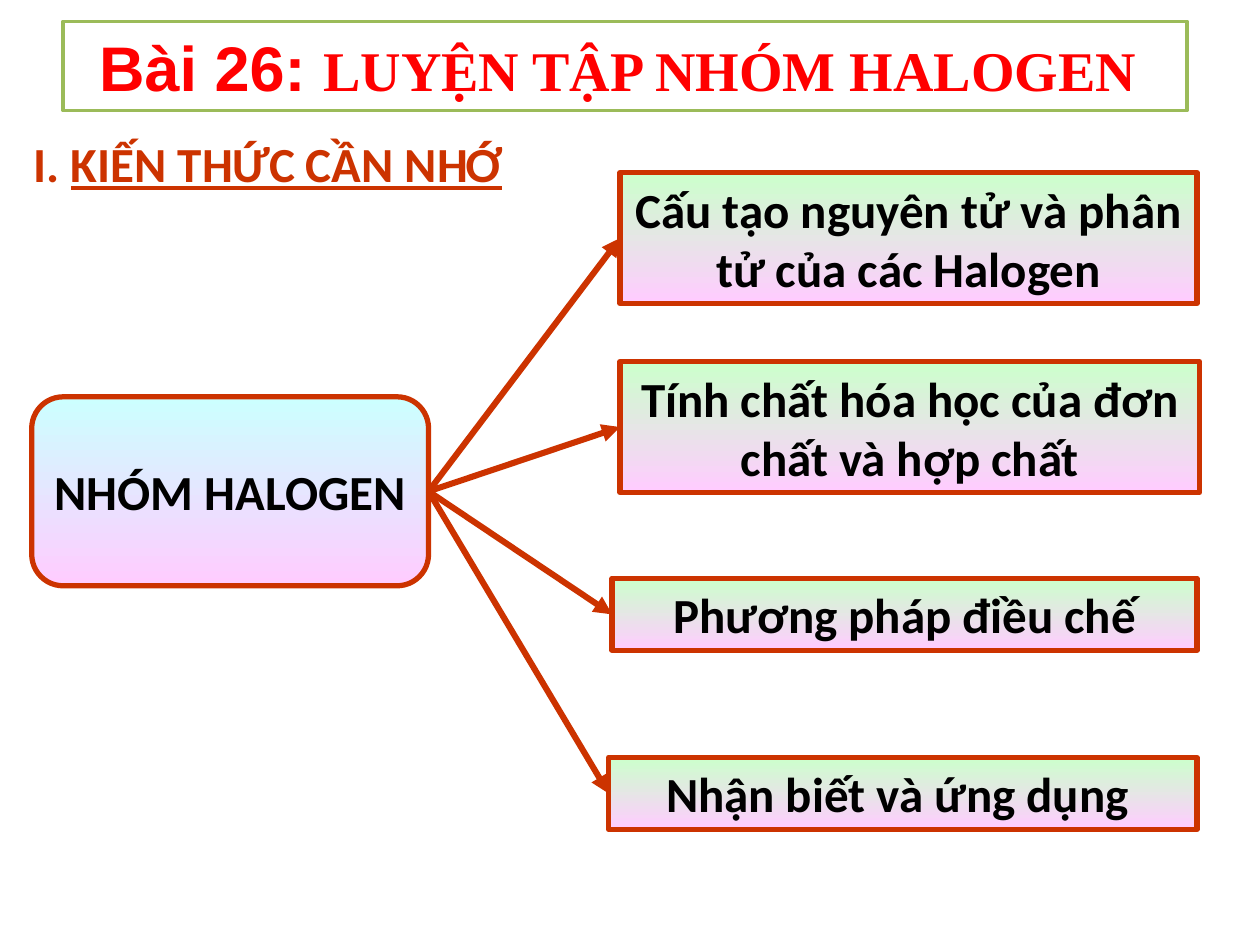
"""Build the overview slide for the halogen group review lesson."""
from lxml import etree
from pptx import Presentation
from pptx.dml.color import RGBColor
from pptx.enum.shapes import MSO_CONNECTOR, MSO_SHAPE
from pptx.enum.text import MSO_ANCHOR, PP_ALIGN
from pptx.oxml.ns import qn
from pptx.util import Cm, Pt

RECT = MSO_SHAPE.RECTANGLE
ROUNDED = MSO_SHAPE.FLOWCHART_ALTERNATE_PROCESS
STRAIGHT = MSO_CONNECTOR.STRAIGHT
MIDDLE = MSO_ANCHOR.MIDDLE
LEFT, CENTER = PP_ALIGN.LEFT, PP_ALIGN.CENTER
RIGHT_SIDE, LEFT_SIDE = 3, 1

COLORS = {
    "rust": "CC3300", "red": "FF0000", "black": "000000", "white": "FFFFFF",
    "olive": "9BBB59", "cyan": "CCFFFF", "green": "CCFFCC", "pink": "FFCCFF",
}
C = {name: RGBColor.from_string(value) for name, value in COLORS.items()}
BODY = {"name": "Calibri", "size": Pt(28), "bold": True}


def write(sp, runs, color, align, wrap=True):
    tf = sp.text_frame
    tf.word_wrap = wrap
    tf.vertical_anchor = MIDDLE
    p = tf.paragraphs[0]
    p.alignment = align
    for text, fmt in runs:
        r = p.add_run()
        r.text = text
        for key, value in {**BODY, **fmt}.items():
            setattr(r.font, key, value)
        r.font.color.rgb = C[color]


def add_box(shape_type, box, top_color, text, wrap=True):
    sp = s.shapes.add_shape(shape_type, *map(Cm, box))
    sp.shadow.inherit = False
    sp.fill.gradient()
    sp.fill.gradient_angle = 270
    for stop, color in zip(sp.fill.gradient_stops, (top_color, "pink")):
        stop.color.rgb = C[color]
    sp.line.color.rgb = C["rust"]
    sp.line.width = Pt(3)
    write(sp, [(text, {})], "black", CENTER, wrap)
    return sp


prs = Presentation()
prs.slide_width, prs.slide_height = Cm(25.4), Cm(19.05)
s = prs.slides.add_slide(prs.slide_layouts[5])

title = s.shapes.title
title.left, title.top, title.width, title.height = map(Cm, (1.27, 0.43, 22.66, 1.8))
title.fill.solid()
title.fill.fore_color.rgb = C["white"]
title.line.color.rgb = C["olive"]
title.line.width = Pt(2)
write(title, [
    ("Bài 26: ", {"name": "Arial", "size": Pt(36)}),
    ("LUYỆN TẬP NHÓM HALOGEN ", {"name": "Times New Roman", "size": Pt(32)}),
], "red", CENTER)

heading = s.shapes.add_textbox(*map(Cm, (0.43, 2.57, 13.34, 1.45)))
write(heading, [("I. ", {}), ("KIẾN THỨC CẦN NHỚ", {"underline": True})], "rust", LEFT)

group = add_box(ROUNDED, (0.64, 8, 8, 3.81), "cyan", "NHÓM HALOGEN", wrap=False)

TOPICS = [
    ((12.5, 3.48, 11.63, 2.64), "Cấu tạo nguyên tử và phân tử của các Halogen"),
    ((12.5, 7.29, 11.68, 2.64), "Tính chất hóa học của đơn chất và hợp chất"),
    ((12.34, 11.66, 11.79, 1.45), "Phương pháp điều chế"),
    ((12.27, 15.27, 11.86, 1.45), "Nhận biết và ứng dụng "),
]
for box, text in TOPICS:
    topic = add_box(RECT, box, "green", text)
    arrow = s.shapes.add_connector(STRAIGHT, 0, 0, 0, 0)
    arrow.begin_connect(group, RIGHT_SIDE)
    arrow.end_connect(topic, LEFT_SIDE)
    arrow.line.color.rgb = C["rust"]
    arrow.line.width = Pt(3.5)
    etree.SubElement(arrow.line._get_or_add_ln(), qn("a:tailEnd"), type="triangle")
    etree.SubElement(arrow._element.spPr, qn("a:effectLst"))

prs.save("out.pptx")
